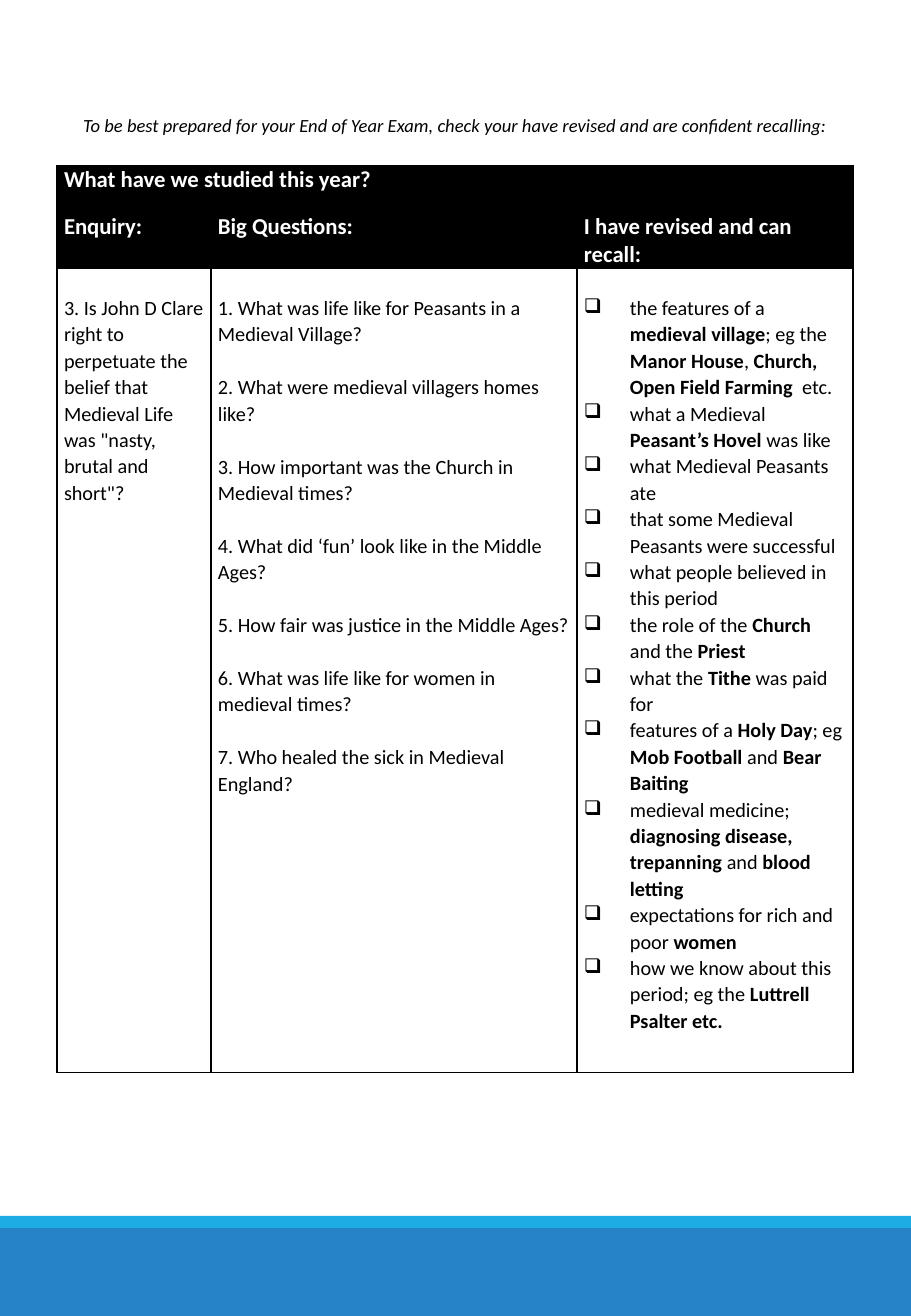
from lxml.etree import SubElement
from pptx import Presentation
from pptx.dml.color import RGBColor
from pptx.enum.shapes import MSO_SHAPE as SHAPE
from pptx.enum.text import PP_ALIGN as ALIGN
from pptx.oxml.ns import qn
from pptx.util import Pt

EMU_PER_PX = 7526
BLACK, WHITE = "000000", "FFFFFF"
BLUE, SKY = "2683C6", "1CADE4"


def px(n):
    return n * EMU_PER_PX


def rgb(color):
    return RGBColor.from_string(color)


class Page:
    font = "Calibri"
    pad = 7
    indent = 46

    def __init__(self, prs):
        self.s = prs.slides.add_slide(prs.slide_layouts[6])

    def bar(self, x, y, w, h, color):
        sp = self.s.shapes.add_shape(SHAPE.RECTANGLE, px(x), px(y), px(w), px(h))
        sp.shadow.inherit = False
        sp.fill.solid()
        sp.fill.fore_color.rgb = rgb(color)
        sp.line.fill.background()

    def run(self, p, text, size, color=BLACK, bold=False, italic=False):
        r = p.add_run()
        r.text = text
        f = r.font
        f.name, f.size, f.bold, f.italic = self.font, Pt(size), bold, italic
        f.color.rgb = rgb(color)

    def text(self, x, y, w, h, text, size):
        tf = self.s.shapes.add_textbox(px(x), px(y), px(w), px(h)).text_frame
        tf.word_wrap = True
        p = tf.paragraphs[0]
        p.alignment = ALIGN.CENTER
        self.run(p, text, size, italic=True)

    def table(self, x, y, cols, rows):
        shape = self.s.shapes.add_table(len(rows), len(cols), px(x), px(y),
                                        px(sum(cols)), px(sum(rows)))
        tbl = shape.table
        tbl.first_row = tbl.horz_banding = False
        for col, w in zip(tbl.columns, cols):
            col.width = px(w)
        for row, h in zip(tbl.rows, rows):
            row.height = px(h)
        return tbl

    def cell(self, cell, fill, top=0):
        cell.margin_left = cell.margin_right = px(self.pad)
        cell.margin_top, cell.margin_bottom = px(top), 0
        tcPr = cell._tc.get_or_add_tcPr()
        for side in ("a:lnL", "a:lnR", "a:lnT", "a:lnB"):
            ln = SubElement(tcPr, qn(side), w=str(Pt(1)))
            SubElement(SubElement(ln, qn("a:solidFill")), qn("a:srgbClr"), val=BLACK)
        cell.fill.solid()
        cell.fill.fore_color.rgb = rgb(fill)

    def heading(self, cell, text):
        self.run(cell.text_frame.paragraphs[0], text, 13.5, WHITE, bold=True)

    def items(self, cell, items, gap=0, bullet=None):
        tf = cell.text_frame
        for i, item in enumerate(items):
            p = tf.add_paragraph() if i else tf.paragraphs[0]
            p.line_spacing = 1.07
            if i:
                p.space_before = Pt(gap)
            if bullet:
                pPr = p._p.get_or_add_pPr()
                pPr.set("marL", str(px(self.indent)))
                pPr.set("indent", str(-px(self.indent)))
                SubElement(pPr, qn("a:buChar"), char=bullet)
            for j, part in enumerate(item.split("*")):
                if part:
                    self.run(p, part, 12, bold=j % 2 == 1)


TITLE = "What have we studied this year?"
HEADINGS = ["Enquiry:", "Big Questions:", "I have revised and can recall:"]
ENQUIRY = ["3. Is John D Clare right to perpetuate the belief that Medieval Life "
           "was \"nasty, brutal and short\"?"]
QUESTIONS = [
    "1. What was life like for Peasants in a Medieval Village?",
    "2. What were medieval villagers homes like?",
    "3. How important was the Church in Medieval times?",
    "4. What did ‘fun’ look like in the Middle Ages?",
    "5. How fair was justice in the Middle Ages?",
    "6. What was life like for women in medieval times?",
    "7. Who healed the sick in Medieval England?",
]
CHECKLIST = [
    "the features of a *medieval village*; eg the *Manor House*, "
    "*Church, Open Field Farming * etc.",
    "what a Medieval *Peasant’s Hovel* was like",
    "what Medieval Peasants ate",
    "that some Medieval Peasants were successful",
    "what people believed in this period",
    "the role of the *Church* and the *Priest*",
    "what the *Tithe *was paid for",
    "features of a *Holy Day*; eg *Mob Football* and *Bear Baiting*",
    "medieval medicine; *diagnosing disease, trepanning *and* blood letting*",
    "expectations for rich and poor *women*",
    "how we know about this period; eg the *Luttrell Psalter etc.*",
]


def main():
    prs = Presentation()
    prs.slide_width, prs.slide_height = px(911), px(1316)
    page = Page(prs)
    page.bar(0, 1228, 911, 88, BLUE)
    page.bar(0, 1216, 911, 12, SKY)

    tbl = page.table(57, 166, [154, 366, 276], [47, 55, 804])
    for c in range(3):
        page.cell(tbl.cell(0, c), BLACK)
        page.cell(tbl.cell(1, c), BLACK)
        page.cell(tbl.cell(2, c), WHITE, top=26)
        page.heading(tbl.cell(1, c), HEADINGS[c])
    tbl.cell(0, 0).merge(tbl.cell(0, 2))
    page.heading(tbl.cell(0, 0), TITLE)
    page.items(tbl.cell(2, 0), ENQUIRY)
    page.items(tbl.cell(2, 1), QUESTIONS, gap=15.7)
    page.items(tbl.cell(2, 2), CHECKLIST, bullet="❑")

    page.text(57, 108, 797, 35, "To be best prepared for your End of Year Exam, check "
              "your have revised and are confident recalling:", 11)
    prs.save("out.pptx")


if __name__ == "__main__":
    main()
